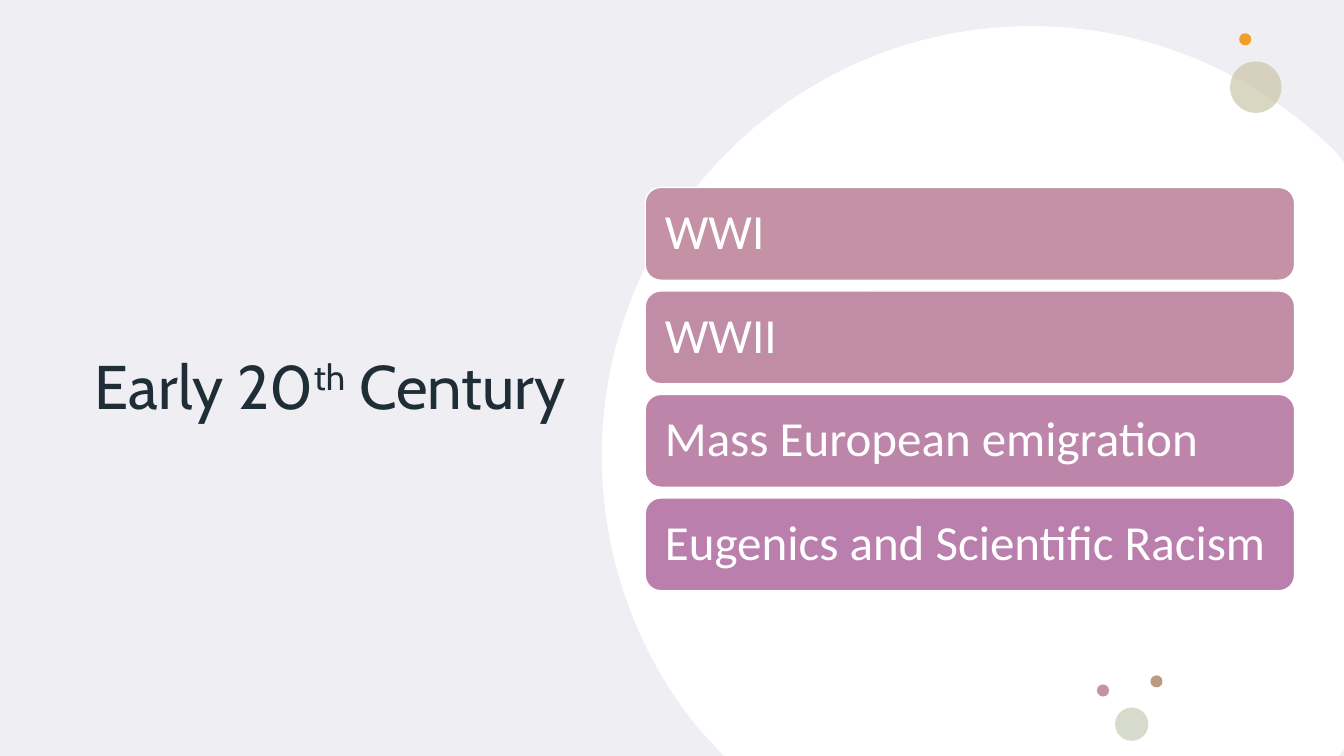
from dataclasses import dataclass

from pptx import Presentation
from pptx.dml.color import RGBColor
from pptx.enum import shapes, text
from pptx.oxml import parse_xml
from pptx.oxml.ns import nsdecls
from pptx.util import Inches, Pt

TITLE_RUNS = [("Early 20", 0), ("th", 30), (" Century", 0)]  # text, raise in %
EVENTS = [
    ("WWI", "C492A4"),
    ("WWII", "C18CA6"),
    ("Mass European emigration", "BD85A9"),
    ("Eugenics and Scientific Racism", "BA7FAD"),
]
DOTS = [  # left, top, diameter, colour, opacity in %
    (12.2, 0.61, 0.51, "CBC7AB", 72),
    (12.29, 0.33, 0.12, "F39E29", 100),
    (11.41, 6.7, 0.12, "BB9B81", 100),
    (11.06, 7.02, 0.33, "D7DBCB", 100),
    (10.88, 6.79, 0.12, "C492A4", 100),
]
DISC_START = (10.23, 0.26)
DISC_SEGMENTS = [  # one point is a straight line, three points are a curve
    [(11.41, 0.26), (12.47, 0.74), (13.25, 1.51)],
    [(13.33, 1.61)],
    [(13.33, 7.44)],
    [(13.28, 7.5)],
    [(7.18, 7.5)],
    [(6.94, 7.24)],
    [(6.33, 6.5), (5.97, 5.55), (5.97, 4.52)],
    [(5.97, 2.17), (7.88, 0.26), DISC_START],
]
SLIDE_WIDTH, SLIDE_HEIGHT = 13.33, 7.5
BAR_LEFT, BAR_WIDTH, BAR_HEIGHT = 6.4, 6.44, 0.92
FIRST_BAR_TOP, LAST_BAR_TOP = 1.86, 4.94


@dataclass(frozen=True)
class Theme:
    tint: str = "CCC8D4"
    tint_opacity: int = 30
    white: str = "FFFFFF"
    ink: str = "1F2D37"
    title_font: str = "Cabin"
    body_font: str = "Calibri"
    title_size: int = 44
    body_size: int = 35


THEME = Theme()


def fill_solid(shape, colour, opacity=100):
    shape.shadow.inherit = False
    shape.line.fill.background()
    shape.fill.solid()
    shape.fill.fore_color.rgb = RGBColor.from_string(colour)
    if opacity < 100:
        alpha = f'<a:alpha {nsdecls("a")} val="{opacity * 1000}"/>'
        shape.fill._xPr.find(".//{*}srgbClr").append(parse_xml(alpha))


def add_filled(slide, preset, left, top, width, height, colour, opacity=100):
    shape = slide.shapes.add_shape(
        preset, Inches(left), Inches(top), Inches(width), Inches(height))
    fill_solid(shape, colour, opacity)
    return shape


def write_text(shape, runs, *, font, size, colour, inset=None):
    """Fill a shape with one left-aligned paragraph of (text, raise) runs."""
    frame = shape.text_frame
    frame.word_wrap = True
    frame.auto_size = text.MSO_AUTO_SIZE.NONE
    frame.vertical_anchor = text.MSO_ANCHOR.MIDDLE
    if inset is not None:
        frame.margin_left = frame.margin_right = Inches(inset)
        frame.margin_top = frame.margin_bottom = Inches(inset)
    paragraph = frame.paragraphs[0]
    paragraph.alignment = text.PP_ALIGN.LEFT
    paragraph.line_spacing = 0.9
    for content, raised in runs:
        run = paragraph.add_run()
        run.text = content
        run.font.name = font
        run.font.size = Pt(size)
        run.font.color.rgb = RGBColor.from_string(colour)
        if raised:
            run.font._element.set("baseline", str(raised * 1000))


def add_tint(slide):
    """Lay the tint over the white slide, behind the title."""
    tint = add_filled(slide, shapes.MSO_SHAPE.RECTANGLE, 0, 0, SLIDE_WIDTH,
                      SLIDE_HEIGHT, THEME.tint, THEME.tint_opacity)
    slide.shapes.title._element.addprevious(tint._element)


def add_title(slide):
    title = slide.shapes.title
    title.left, title.top = Inches(0.84), Inches(1.04)
    title.width, title.height = Inches(5.04), Inches(5.64)
    write_text(title, TITLE_RUNS, font=THEME.title_font,
               size=THEME.title_size, colour=THEME.ink)


def add_disc(slide):
    """Draw the cut-off circle, merging line triples into cubic curves."""
    points = [(Inches(x), Inches(y)) for part in DISC_SEGMENTS for x, y in part]
    builder = slide.shapes.build_freeform(*map(Inches, DISC_START))
    builder.add_line_segments(points, close=True)
    disc = builder.convert_to_shape()
    fill_solid(disc, THEME.white)
    lines = iter(disc._element.findall(".//{*}lnTo"))
    for segment in DISC_SEGMENTS:
        parts = [next(lines) for _ in segment]
        if len(parts) == 3:
            curve = parse_xml(f'<a:cubicBezTo {nsdecls("a")}/>')
            parts[0].addprevious(curve)
            for line in parts:
                curve.append(line[0])
                line.getparent().remove(line)


def add_dots(slide):
    for left, top, diameter, colour, opacity in DOTS:
        add_filled(slide, shapes.MSO_SHAPE.OVAL, left, top, diameter, diameter,
                   colour, opacity)


def add_event_bars(slide):
    pitch = (LAST_BAR_TOP - FIRST_BAR_TOP) / (len(EVENTS) - 1)
    for index, (event, colour) in enumerate(EVENTS):
        bar = add_filled(slide, shapes.MSO_SHAPE.ROUNDED_RECTANGLE, BAR_LEFT,
                         FIRST_BAR_TOP + index * pitch, BAR_WIDTH, BAR_HEIGHT, colour)
        bar.line.color.rgb = RGBColor.from_string(THEME.white)
        bar.line.width = Pt(1)
        write_text(bar, [(event, 0)], font=THEME.body_font,
                   size=THEME.body_size, colour=THEME.white, inset=0.15)


def main():
    presentation = Presentation()
    presentation.slide_width = Inches(SLIDE_WIDTH)
    presentation.slide_height = Inches(SLIDE_HEIGHT)
    slide = presentation.slides.add_slide(
        presentation.slide_layouts.get_by_name("Title Only"))
    slide.background.fill.solid()
    slide.background.fill.fore_color.rgb = RGBColor.from_string(THEME.white)
    add_tint(slide)
    add_title(slide)
    add_disc(slide)
    add_dots(slide)
    add_event_bars(slide)
    presentation.save("out.pptx")


if __name__ == "__main__":
    main()
